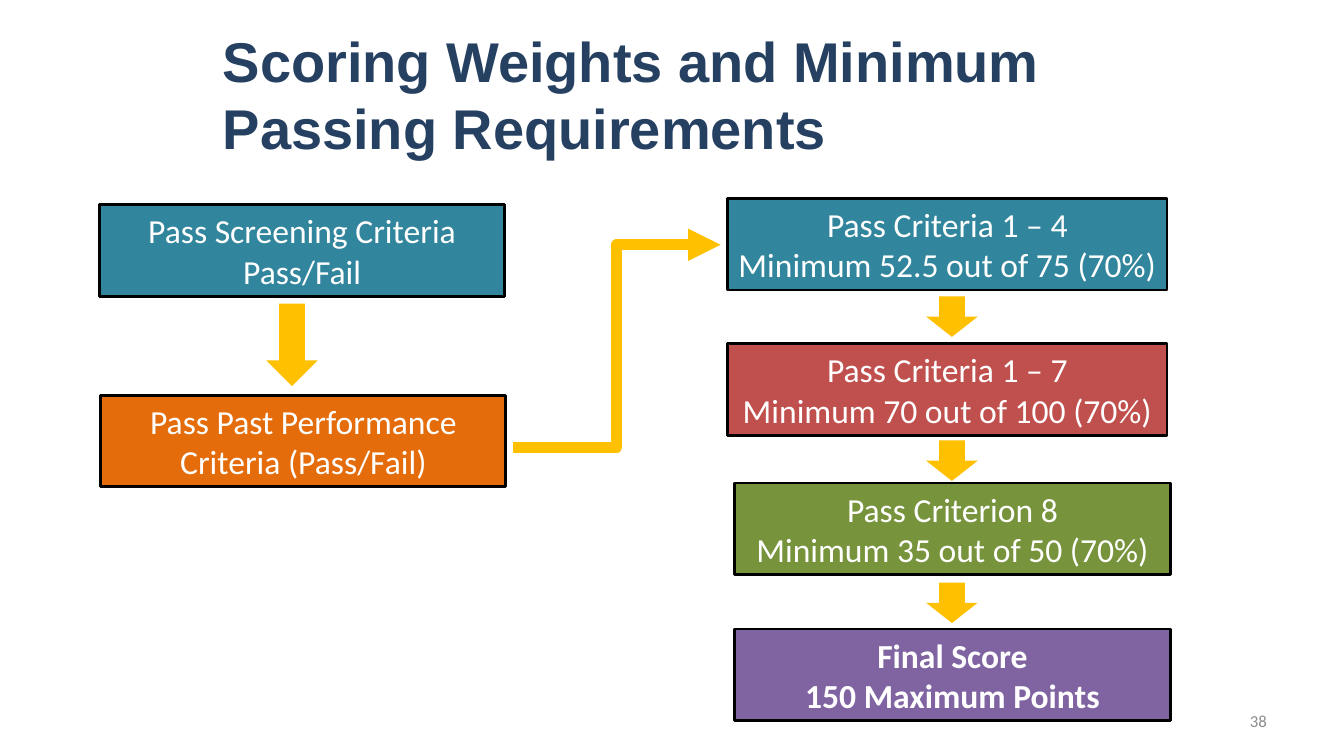
from dataclasses import dataclass

import lxml.etree
import pptx
import pptx.dml.color
import pptx.enum.shapes
import pptx.enum.text
import pptx.oxml.ns
import pptx.slide
import pptx.text.text
import pptx.util

Cm = pptx.util.Cm
Pt = pptx.util.Pt
RGBColor = pptx.dml.color.RGBColor
PP_ALIGN = pptx.enum.text.PP_ALIGN
MSO_SHAPE = pptx.enum.shapes.MSO_SHAPE

NAVY = RGBColor(0x25, 0x40, 0x61)
TEAL = RGBColor(0x31, 0x85, 0x9C)
ORANGE = RGBColor(0xE4, 0x6C, 0x0A)
RED = RGBColor(0xC0, 0x50, 0x4D)
GREEN = RGBColor(0x77, 0x93, 0x3C)
PURPLE = RGBColor(0x80, 0x64, 0xA2)
GOLD = RGBColor(0xFF, 0xC0, 0x00)
GRAY = RGBColor(0x8C, 0x8C, 0x8C)
BLACK = RGBColor(0x00, 0x00, 0x00)
WHITE = RGBColor(0xFF, 0xFF, 0xFF)

BOX_HEIGHT = 2.31
ARROW_WIDTH = 1.3


@dataclass(frozen=True)
class Step:
    text: str
    left: float
    top: float
    width: float
    fill: RGBColor
    bold: bool = False


@dataclass(frozen=True)
class DownArrow:
    left: float
    top: float
    height: float


STEPS = [
    Step("Pass Screening Criteria\nPass/Fail", 2.51, 5.16, 10.21, TEAL),
    Step("Pass Past Performance Criteria (Pass/Fail)", 2.54, 9.96, 10.21, ORANGE),
    Step("Pass Criteria 1 – 4\nMinimum 52.5 out of 75 (70%)", 18.34, 5, 11.07, TEAL),
    Step("Pass Criteria 1 – 7\nMinimum 70 out of 100 (70%)", 18.34, 8.66, 11.07, RED),
    Step("Pass Criterion 8\nMinimum 35 out of 50 (70%)", 18.52, 12.17, 10.97, GREEN),
    Step("Final Score\n150 Maximum Points", 18.52, 15.85, 10.97, PURPLE, True),
]

DOWN_ARROWS = [DownArrow(6.71, 7.65, 2.08)] + [
    DownArrow(23.34, top, 1.02) for top in (7.47, 11.1, 14.68)
]


def format_text(
    text_frame: pptx.text.text.TextFrame,
    font_name: str,
    size: float,
    color: RGBColor,
    alignment: PP_ALIGN,
    bold: bool = False,
) -> None:
    text_frame.word_wrap = True
    text_frame.vertical_anchor = pptx.enum.text.MSO_ANCHOR.MIDDLE
    for paragraph in text_frame.paragraphs:
        paragraph.alignment = alignment
        for run in paragraph.runs:
            run.font.name = font_name
            run.font.size = Pt(size)
            run.font.bold = bold
            run.font.color.rgb = color


def add_title(slide: pptx.slide.Slide) -> None:
    title = slide.shapes.title
    title.left, title.top = Cm(5.36), Cm(0.76)
    title.width, title.height = Cm(25.88), Cm(3.18)
    title.text_frame.text = "Scoring Weights and Minimum Passing Requirements"
    title.text_frame.auto_size = pptx.enum.text.MSO_AUTO_SIZE.NONE
    format_text(title.text_frame, "Arial", 40, NAVY, PP_ALIGN.LEFT, True)


def add_step(slide: pptx.slide.Slide, step: Step) -> None:
    shape = slide.shapes.add_shape(
        MSO_SHAPE.RECTANGLE, Cm(step.left), Cm(step.top), Cm(step.width), Cm(BOX_HEIGHT)
    )
    shape.shadow.inherit = False
    shape.fill.solid()
    shape.fill.fore_color.rgb = step.fill
    shape.line.color.rgb = BLACK
    shape.line.width = Pt(2)
    text_frame = shape.text_frame
    text_frame.text = step.text
    text_frame.margin_left = text_frame.margin_right = Cm(0.2)
    text_frame.auto_size = pptx.enum.text.MSO_AUTO_SIZE.SHAPE_TO_FIT_TEXT
    format_text(text_frame, "Calibri", 24, WHITE, PP_ALIGN.CENTER, step.bold)


def add_down_arrow(slide: pptx.slide.Slide, arrow: DownArrow) -> None:
    shape = slide.shapes.add_shape(
        MSO_SHAPE.DOWN_ARROW, Cm(arrow.left), Cm(arrow.top), Cm(ARROW_WIDTH), Cm(arrow.height)
    )
    shape.shadow.inherit = False
    shape.fill.solid()
    shape.fill.fore_color.rgb = GOLD
    shape.line.fill.background()


def add_elbow_arrow(slide: pptx.slide.Slide) -> None:
    connector = slide.shapes.add_connector(
        pptx.enum.shapes.MSO_CONNECTOR.ELBOW, Cm(12.93), Cm(11.28), Cm(18.16), Cm(6.17)
    )
    connector.line.color.rgb = GOLD
    connector.line.width = Pt(7.75)
    qualified_name = pptx.oxml.ns.qn
    line = connector.line._get_or_add_ln()
    lxml.etree.SubElement(line, qualified_name("a:round"))
    lxml.etree.SubElement(line, qualified_name("a:tailEnd"), type="triangle")
    lxml.etree.SubElement(connector._element.spPr, qualified_name("a:effectLst"))


def add_slide_number(slide: pptx.slide.Slide) -> None:
    text_box = slide.shapes.add_textbox(Cm(24.28), Cm(17.65), Cm(7.9), Cm(1.02))
    text_box.text_frame.text = "38"
    format_text(text_box.text_frame, "Calibri", 12, GRAY, PP_ALIGN.RIGHT)


def main() -> None:
    presentation = pptx.Presentation()
    presentation.slide_width = Cm(33.87)
    presentation.slide_height = Cm(19.05)
    title_only = presentation.slide_layouts.get_by_name("Title Only")
    slide = presentation.slides.add_slide(title_only)
    add_title(slide)
    add_slide_number(slide)
    for step in STEPS:
        add_step(slide, step)
    for arrow in DOWN_ARROWS:
        add_down_arrow(slide, arrow)
    add_elbow_arrow(slide)
    presentation.save("out.pptx")


if __name__ == "__main__":
    main()
